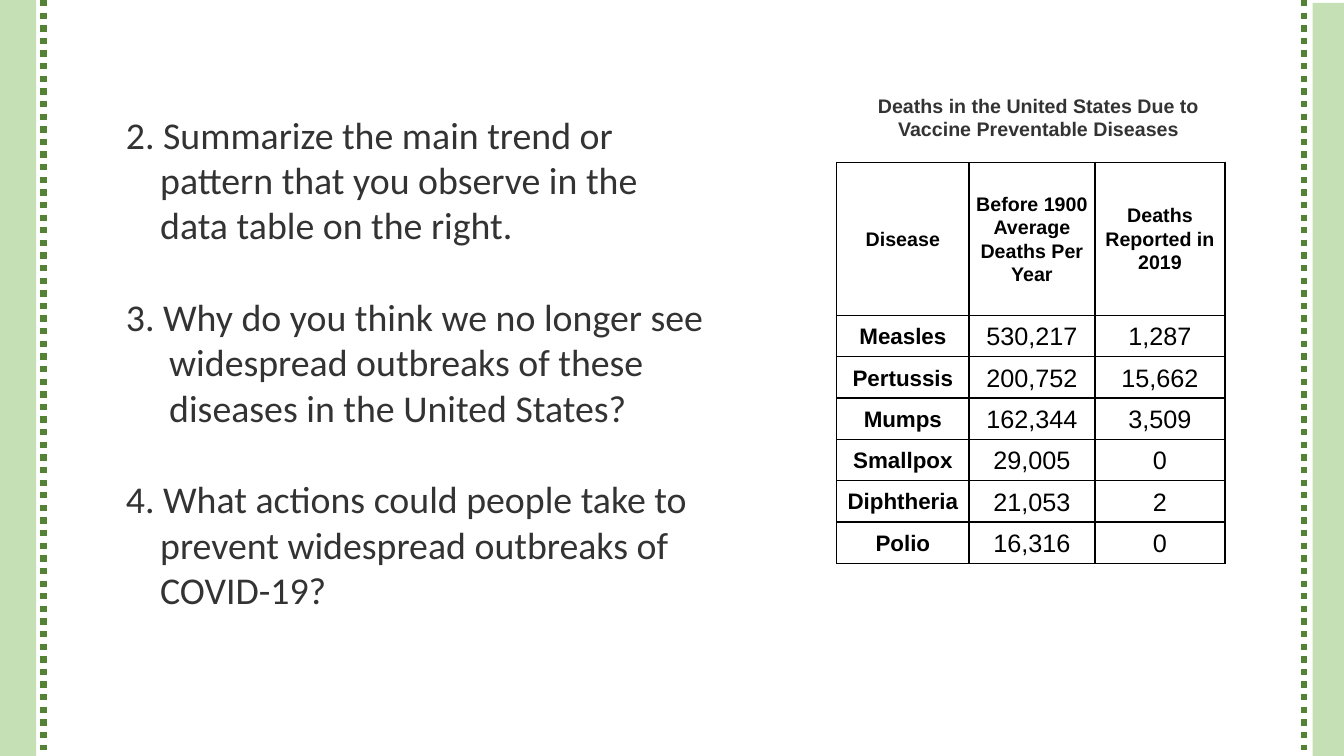
"""Build a slide of discussion questions beside a table of vaccine preventable deaths."""
from dataclasses import dataclass

from lxml import etree
from pptx import Presentation
from pptx.dml.color import RGBColor
from pptx.enum.dml import MSO_LINE
from pptx.enum.shapes import MSO_CONNECTOR, MSO_SHAPE
from pptx.enum.text import MSO_ANCHOR, MSO_AUTO_SIZE, PP_ALIGN
from pptx.oxml.ns import qn
from pptx.util import Inches, Pt

RECTANGLE = MSO_SHAPE.RECTANGLE
STRAIGHT = MSO_CONNECTOR.STRAIGHT
DOTTED = MSO_LINE.ROUND_DOT
CENTER, LEFT = PP_ALIGN.CENTER, PP_ALIGN.LEFT
TOP, MIDDLE = MSO_ANCHOR.TOP, MSO_ANCHOR.MIDDLE
NO_AUTOFIT = MSO_AUTO_SIZE.NONE
TITLE_ONLY = 5


@dataclass(frozen=True)
class Theme:
    """Colours, fonts and type sizes of the slide."""
    band: str = "C5E0B4"
    dots: str = "548235"
    ink: str = "333333"
    grid: str = "000000"
    paper: str = "FFFFFF"
    table_font: str = "Arial"
    question_font: str = "Calibri"
    heading_size: float = 14
    disease_size: float = 16
    count_size: float = 18
    question_size: float = 27


class SlideBuilder:
    """Draws styled elements on the current page."""

    def __init__(self, page, theme):
        self.page = page
        self.theme = theme

    def add_span(self, para, text, font, size, color, bold=False):
        """Append one formatted run to a paragraph."""
        span = para.add_run()
        span.text = text
        span.font.name = font
        span.font.size = Pt(size)
        span.font.bold = bold
        span.font.color.rgb = RGBColor.from_string(color)

    def add_band(self, left, top, width, height):
        """Draw a plain vertical side band."""
        band = self.page.shapes.add_shape(
            RECTANGLE, Inches(left), Inches(top), Inches(width), Inches(height))
        band.shadow.inherit = False
        band.fill.solid()
        band.fill.fore_color.rgb = RGBColor.from_string(self.theme.band)
        band.line.fill.background()

    def add_dotted_line(self, x, bottom):
        """Draw a dotted vertical line from the top edge."""
        line = self.page.shapes.add_connector(
            STRAIGHT, Inches(x), Inches(0), Inches(x), Inches(bottom))
        line.line.color.rgb = RGBColor.from_string(self.theme.dots)
        line.line.width = Pt(4.5)
        line.line.dash_style = DOTTED
        etree.SubElement(line._element.spPr, qn("a:effectLst"))

    def add_title(self, lines, left, top, width, height):
        """Place the table heading in the title placeholder."""
        title = self.page.shapes.title
        title.left, title.top = Inches(left), Inches(top)
        title.width, title.height = Inches(width), Inches(height)
        frame = title.text_frame
        frame.word_wrap = True
        frame.auto_size = NO_AUTOFIT
        frame.vertical_anchor = TOP
        for number, text in enumerate(lines):
            para = frame.add_paragraph() if number else frame.paragraphs[0]
            para.alignment = CENTER
            self.add_span(para, text, self.theme.table_font,
                          self.theme.heading_size, self.theme.ink, True)

    def add_questions(self, questions, left, top, width, height):
        """Write questions with hanging indents and a line of space between."""
        box = self.page.shapes.add_textbox(
            Inches(left), Inches(top), Inches(width), Inches(height))
        frame = box.text_frame
        frame.word_wrap = True
        frame.vertical_anchor = MIDDLE
        for number, (hang, lines) in enumerate(questions):
            para = frame.add_paragraph() if number else frame.paragraphs[0]
            para.alignment = LEFT
            para.space_before = Pt(33 if number else 0)
            properties = para._p.get_or_add_pPr()
            properties.set("marL", str(Inches(hang)))
            properties.set("indent", str(-Inches(hang)))
            for position, text in enumerate(lines):
                if position:
                    para.add_line_break()
                self.add_span(para, text, self.theme.question_font,
                              self.theme.question_size, self.theme.ink)

    def add_borders(self, cell):
        """Outline all four sides of a table cell."""
        properties = cell._tc.get_or_add_tcPr()
        for position, side in enumerate(("a:lnL", "a:lnR", "a:lnT", "a:lnB")):
            border = etree.Element(qn(side), w=str(Pt(1)))
            fill = etree.SubElement(border, qn("a:solidFill"))
            etree.SubElement(fill, qn("a:srgbClr"), val=self.theme.grid)
            properties.insert(position, border)

    def add_table(self, rows, left, top, widths, heights):
        """Draw a bordered table with bold header row and first column."""
        theme = self.theme
        table = self.page.shapes.add_table(
            len(rows), len(widths), Inches(left), Inches(top),
            Inches(sum(widths)), Inches(sum(heights))).table
        for column, width in zip(table.columns, widths):
            column.width = Inches(width)
        for row_number, (values, height) in enumerate(zip(rows, heights)):
            table.rows[row_number].height = Inches(height)
            for column_number, text in enumerate(values):
                cell = table.cell(row_number, column_number)
                cell.fill.solid()
                cell.fill.fore_color.rgb = RGBColor.from_string(theme.paper)
                cell.vertical_anchor = MIDDLE
                cell.margin_left = cell.margin_right = Inches(0.07)
                cell.margin_top = cell.margin_bottom = Inches(0)
                self.add_borders(cell)
                if row_number == 0:
                    size = theme.heading_size
                else:
                    size = theme.count_size if column_number else theme.disease_size
                para = cell.text_frame.paragraphs[0]
                para.alignment = CENTER
                para.line_spacing = 1.07
                self.add_span(para, text, theme.table_font, size, theme.grid,
                              row_number == 0 or column_number == 0)


DEATHS = [
    ("Disease", "Before 1900 Average Deaths Per Year", "Deaths Reported in 2019"),
    ("Measles", "530,217", "1,287"),
    ("Pertussis", "200,752", "15,662"),
    ("Mumps", "162,344", "3,509"),
    ("Smallpox", "29,005", "0"),
    ("Diphtheria", "21,053", "2"),
    ("Polio", "16,316", "0"),
]
QUESTIONS = [
    (0.34, ("2. Summarize the main trend or", "pattern that you observe in the",
            "data table on the right.")),
    (0.43, ("3. Why do you think we no longer see", "widespread outbreaks of these",
            "diseases in the United States?")),
    (0.34, ("4. What actions could people take to", "prevent widespread outbreaks of",
            "COVID-19?")),
]


def main():
    """Assemble and save the slide."""
    deck = Presentation()
    deck.slide_width, deck.slide_height = Inches(13.33), Inches(7.5)
    page = deck.slides.add_slide(deck.slide_layouts[TITLE_ONLY])
    builder = SlideBuilder(page, Theme())
    for band_left, band_top, line_x in ((0, 0, 0.43), (13.02, 0.03, 12.93)):
        builder.add_band(band_left, band_top, 0.36, 7.5)
        builder.add_dotted_line(line_x, 7.44)
    builder.add_table(DEATHS, 8.3, 1.61, (1.31, 1.25, 1.29),
                      [1.52] + [0.41] * (len(DEATHS) - 1))
    builder.add_title(("Deaths in the United States Due to",
                       "Vaccine Preventable Diseases"), 8.58, 0.88, 3.44, 0.53)
    builder.add_questions(QUESTIONS, 1.15, 1.04, 7.42, 5.1)
    deck.save("out.pptx")


if __name__ == "__main__":
    main()
